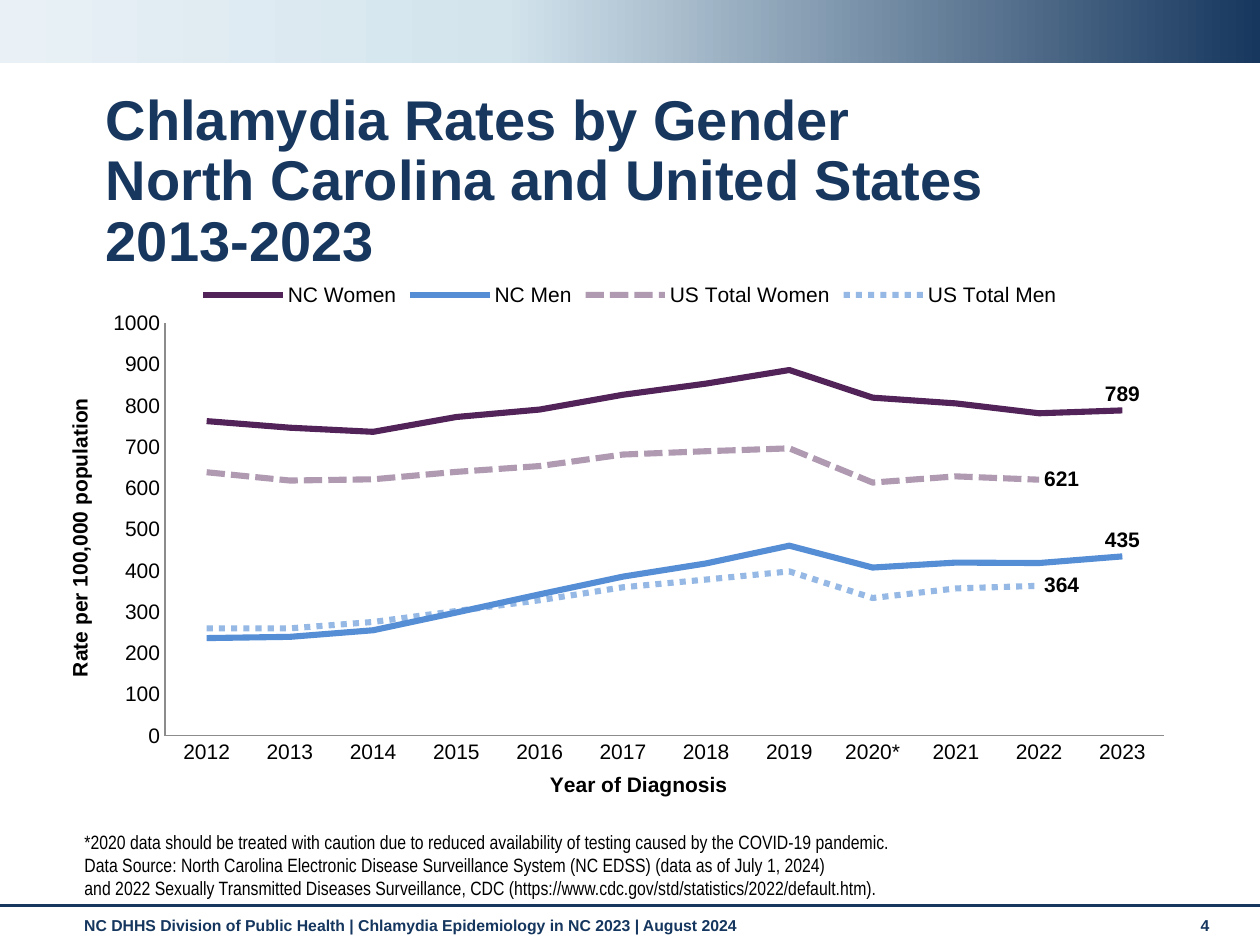
from copy import deepcopy

from lxml import etree
from pptx import Presentation, util as u
from pptx.chart.data import CategoryChartData
from pptx.dml.color import RGBColor
from pptx.enum import chart as ce, dml, shapes, text
from pptx.oxml.ns import qn

NAVY, PURPLE, BLUE, BLACK, GRAY = "17375E", "522358", "558ED5", "000000", "8C8C8C"
FOOTER_COLOR = "15365E"

TITLE = "Chlamydia Rates by Gender\nNorth Carolina and United States\n2013-2023"
NOTES = [
    "*2020 data should be treated with caution due to reduced availability of testing caused by the COVID-19 pandemic.",
    "Data Source: North Carolina Electronic Disease Surveillance System (NC EDSS) (data as of July 1, 2024)",
    "and 2022 Sexually Transmitted Diseases Surveillance, CDC (https://www.cdc.gov/std/statistics/2022/default.htm).",
]
FOOTER = "NC DHHS Division of Public Health | Chlamydia Epidemiology in NC 2023 | August 2024"
PAGE = "4"
BAND_STOPS = [(0, NAVY), (0.6, "D3E4ED"), (1, "E9F1F6")]

YEARS = ["2020*" if year == 2020 else str(year) for year in range(2012, 2024)]
ABOVE, RIGHT = ce.XL_LABEL_POSITION.ABOVE, ce.XL_LABEL_POSITION.RIGHT
DASH, DOT = dml.MSO_LINE.SQUARE_DOT, dml.MSO_LINE.ROUND_DOT
# name, colour, opacity in percent, dash, label position, rates
SERIES = [
    ("NC Women", PURPLE, 100, None, ABOVE,
     [763, 747, 737, 773, 791, 827, 854, 887, 820, 806, 782, 789]),
    ("NC Men", BLUE, 100, None, ABOVE,
     [237, 240, 256, 299, 343, 386, 418, 461, 408, 420, 419, 435]),
    ("US Total Women", PURPLE, 46, DASH, RIGHT,
     [639, 619, 622, 640, 654, 682, 690, 697, 614, 629, 621, None]),
    ("US Total Men", BLUE, 62, DOT, RIGHT,
     [260.6, 260.6, 276.1, 302.7, 328.7, 360.1, 378.9, 398.6, 334.2, 357.4, 363.7, None]),
]
PLOT_AREA = {"x": 0.09, "y": 0.101, "w": 0.881, "h": 0.774}


def rgb(value):
    return RGBColor.from_string(value)


def box(left, top, width, height):
    return [u.Inches(length) for length in (left, top, width, height)]


def set_font(font, size=12, color=BLACK, bold=False, name="Arial"):
    font.size, font.bold, font.name = u.Pt(size), bold, name
    font.color.rgb = rgb(color)


def write(shape, lines, anchor=text.MSO_ANCHOR.TOP, spacing=1.0, **font_format):
    """Fill a shape with one paragraph per item; a newline is a line break."""
    frame = shape.text_frame
    frame.word_wrap = True
    frame.auto_size = text.MSO_AUTO_SIZE.NONE
    frame.vertical_anchor = anchor
    for index, line in enumerate(lines):
        paragraph = frame.add_paragraph() if index else frame.paragraphs[0]
        paragraph.text = line.replace("\n", "\v")
        paragraph.alignment = text.PP_ALIGN.LEFT
        paragraph.line_spacing = spacing
        paragraph.space_before = u.Pt(0)
        for run in paragraph.runs:
            set_font(run.font, **font_format)
        for line_break in paragraph._p.findall(qn("a:br")):
            line_break.append(deepcopy(paragraph.runs[0]._r.rPr))


def add_band(slide, width):
    band = slide.shapes.add_shape(shapes.MSO_SHAPE.RECTANGLE, 0, 0, width, u.Inches(0.5))
    band.shadow.inherit = False
    band.line.fill.background()
    band.fill.gradient()
    band.fill.gradient_angle = 180
    stop_list = band._element.spPr.find(".//" + qn("a:gsLst"))
    stop_list.append(deepcopy(stop_list[0]))
    for stop, (position, color) in zip(band.fill.gradient_stops, BAND_STOPS):
        stop.color.rgb = rgb(color)
        stop.position = position


def add_rule(slide, width):
    top = u.Inches(7.19)
    rule = slide.shapes.add_connector(shapes.MSO_CONNECTOR.STRAIGHT, 0, top, width, top)
    rule.line.color.rgb = rgb(NAVY)
    rule.line.width = u.Pt(1.75)
    etree.SubElement(rule._element.spPr, qn("a:effectLst"))


def format_axis(axis, title):
    axis.has_major_gridlines = False
    axis.major_tick_mark = axis.minor_tick_mark = ce.XL_TICK_MARK.NONE
    axis.format.line.color.rgb = rgb(GRAY)
    axis.format.line.width = u.Pt(0.75)
    set_font(axis.tick_labels.font)
    axis.axis_title.text_frame.text = title
    set_font(axis.axis_title.text_frame.paragraphs[0].runs[0].font, bold=True)


def add_rate_chart(slide):
    data = CategoryChartData(number_format="#,##0")
    data.categories = YEARS
    for name, *_, rates in SERIES:
        data.add_series(name, rates)
    chart = slide.shapes.add_chart(ce.XL_CHART_TYPE.LINE, *box(0.5, 2.14, 9, 4.23), data).chart
    set_font(chart.font)
    chart.has_title = False
    chart.has_legend = True
    chart.legend.position = ce.XL_LEGEND_POSITION.TOP
    chart.legend.include_in_layout = False
    set_font(chart.legend.font)

    format_axis(chart.category_axis, "Year of Diagnosis")
    rate_axis = chart.value_axis
    format_axis(rate_axis, "Rate per 100,000 population")
    rate_axis.minimum_scale, rate_axis.maximum_scale, rate_axis.major_unit = 0, 1000, 100
    rate_axis.tick_labels.number_format = "0"
    rate_axis.tick_labels.number_format_is_linked = False

    # Lines, with a label on the last known rate only
    plot = chart.plots[0]
    plot.vary_by_categories = False
    for series, (_, color, opacity, dash, position, rates) in zip(plot.series, SERIES):
        series.smooth = False
        series.marker.style = ce.XL_MARKER_STYLE.NONE
        line = series.format.line
        line.color.rgb = rgb(color)
        line.width = u.Pt(3.5)
        if dash:
            line.dash_style = dash
            solid = series._element.find(".//" + qn("a:ln")).find(".//" + qn("a:srgbClr"))
            etree.SubElement(solid, qn("a:alpha"), val=str(opacity * 1000))
        last = max(i for i, rate in enumerate(rates) if rate is not None)
        label = series.points[last].data_label
        set_font(label.font, bold=True)
        label.position = position

    # Fixed inner plot area
    plot_area = chart._chartSpace.find(".//" + qn("c:plotArea"))
    layout = plot_area.find(qn("c:layout"))
    if layout is None:
        layout = etree.Element(qn("c:layout"))
        plot_area.insert(0, layout)
    manual = etree.SubElement(layout, qn("c:manualLayout"))
    settings = {"layoutTarget": "inner", "xMode": "edge", "yMode": "edge", **PLOT_AREA}
    for tag, value in settings.items():
        etree.SubElement(manual, qn("c:" + tag), val=str(value))


def main():
    presentation = Presentation()
    presentation.slide_width, presentation.slide_height = u.Inches(10), u.Inches(7.5)
    slide = presentation.slides.add_slide(presentation.slide_layouts[1])

    # Header band and footer
    add_band(slide, presentation.slide_width)
    add_rule(slide, presentation.slide_width)
    for content, left, width in [(FOOTER, 0.57, 8.74), (PAGE, 9.43, 0.44)]:
        footer = slide.shapes.add_textbox(*box(left, 7.22, width, 0.29))
        write(footer, [content], size=9, color=FOOTER_COLOR, bold=True)

    # Title and source notes
    title, notes = slide.shapes.title, slide.placeholders[1]
    title.left, title.top, title.width, title.height = box(0.74, 0.68, 9.26, 0.6)
    write(title, [TITLE], spacing=0.9, size=32, color=NAVY, bold=True)
    notes.left, notes.top, notes.width, notes.height = box(0.57, 6.83, 9.1, 0.36)
    write(notes, NOTES, anchor=text.MSO_ANCHOR.BOTTOM, size=11, name="Arial Narrow")
    for paragraph in notes.text_frame.paragraphs:
        properties = paragraph._p.get_or_add_pPr()
        properties.set("marL", "0")
        properties.set("indent", "0")
        etree.SubElement(properties, qn("a:buNone"))

    add_rate_chart(slide)
    presentation.save("out.pptx")


if __name__ == "__main__":
    main()
